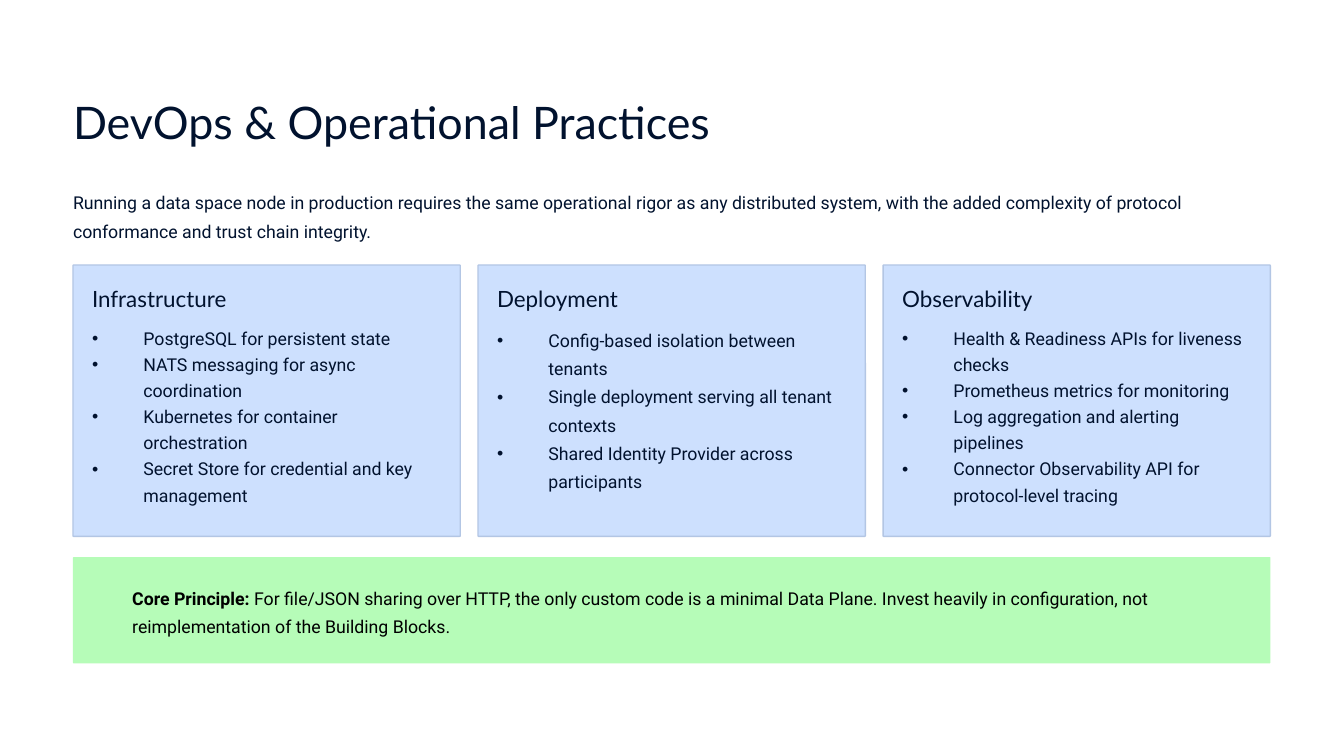
from dataclasses import dataclass

from lxml.etree import SubElement
from pptx import Presentation
from pptx.dml.color import RGBColor
from pptx.enum.shapes import MSO_SHAPE
from pptx.enum.text import MSO_ANCHOR, MSO_AUTO_SIZE, PP_ALIGN
from pptx.oxml.ns import qn
from pptx.util import Cm, Pt


@dataclass(frozen=True)
class Theme:
    page: str = "FFFFFF"
    ink: str = "01122E"
    card: str = "CDE0FE"
    card_line: str = "B3C6E4"
    callout: str = "B6FCB8"
    callout_ink: str = "000000"
    heading_font: str = "Lato"
    body_font: str = "Roboto"
    title_size: float = 24
    card_title_size: float = 12
    body_size: float = 9.5


@dataclass(frozen=True)
class Box:
    left: float
    top: float
    width: float
    height: float

    def inner_box(self, dx, dy, width, height):
        return Box(self.left + dx, self.top + dy, width, height)

    def lengths(self):
        return [Cm(v) for v in (self.left, self.top, self.width, self.height)]


THEME = Theme()
INDENT = 0.97
CARDS = [
    ("Infrastructure", 1, 1.23, [
        "PostgreSQL for persistent state",
        "NATS messaging for async coordination",
        "Kubernetes for container orchestration",
        "Secret Store for credential and key management",
    ]),
    ("Deployment", 2, 1.33, [
        "Config-based isolation between tenants",
        "Single deployment serving all tenant contexts",
        "Shared Identity Provider across participants",
    ]),
    ("Observability", 4, 1.23, [
        "Health & Readiness APIs for liveness checks",
        "Prometheus metrics for monitoring",
        "Log aggregation and alerting pipelines",
        "Connector Observability API for protocol-level tracing",
    ]),
]


def rgb(value):
    return RGBColor.from_string(value)


def move_to_front(sp, box):
    sp.left, sp.top, sp.width, sp.height = box.lengths()
    sp.element.getparent().append(sp.element)


def add_bullet(p):
    pPr = p._p.get_or_add_pPr()
    pPr.set("marL", str(Cm(INDENT)))
    pPr.set("indent", str(-Cm(INDENT)))
    color = SubElement(pPr, qn("a:buClr"))
    SubElement(color, qn("a:srgbClr")).set("val", THEME.ink)
    SubElement(pPr, qn("a:buChar")).set("char", "•")


def format_text(tf, font, size, spacing, color=THEME.ink, bullets=False):
    tf.word_wrap = True
    tf.auto_size = MSO_AUTO_SIZE.NONE
    tf.vertical_anchor = MSO_ANCHOR.TOP
    tf.margin_left = tf.margin_top = tf.margin_right = tf.margin_bottom = 0
    for p in tf.paragraphs:
        if bullets:
            add_bullet(p)
        p.alignment = PP_ALIGN.LEFT
        p.line_spacing = spacing
        p.space_before = Pt(0)
        for r in p.runs:
            r.font.name = font
            r.font.size = Pt(size)
            r.font.bold = False
            r.font.color.rgb = rgb(color)


def add_panel(s, box, fill, radius, line=None):
    sp = s.shapes.add_shape(MSO_SHAPE.ROUNDED_RECTANGLE, *box.lengths())
    sp.shadow.inherit = False
    sp.adjustments[0] = radius
    sp.fill.solid()
    sp.fill.fore_color.rgb = rgb(fill)
    if line:
        sp.line.color.rgb = rgb(line)
        sp.line.width = Pt(0.75)
    else:
        sp.line.fill.background()


def add_header(s, box):
    title = s.shapes.title
    title.text_frame.text = "DevOps & Operational Practices"
    format_text(title.text_frame, THEME.heading_font, THEME.title_size, 1.04)
    move_to_front(title, box.inner_box(0, 0, box.width, 1.07))

    intro = s.placeholders[3]
    intro.text_frame.text = (
        "Running a data space node in production requires the same operational rigor "
        "as any distributed system, with the added complexity of protocol conformance "
        "and trust chain integrity."
    )
    format_text(intro.text_frame, THEME.body_font, THEME.body_size, 1.33)
    move_to_front(intro, box.inner_box(0, 1.75, box.width, 1.09))


def add_card(s, box, heading, idx, spacing, items):
    pad = 0.36
    inner = box.width - 2 * pad
    add_panel(s, box, THEME.card, 0.003, THEME.card_line)

    label = s.shapes.add_textbox(*box.inner_box(pad, pad, inner, 0.53).lengths())
    label.text_frame.text = heading
    format_text(label.text_frame, THEME.heading_font, THEME.card_title_size, 1.04)

    body = s.placeholders[idx]
    body.text_frame.text = "\n".join(items)
    format_text(body.text_frame, THEME.body_font, THEME.body_size, spacing, bullets=True)
    move_to_front(body, box.inner_box(pad, 1.09, inner, 3.66))


def add_cards(s, box):
    width = 7.32
    step = (box.width - width) / (len(CARDS) - 1)
    for i, card in enumerate(CARDS):
        add_card(s, box.inner_box(i * step, 0, width, box.height), *card)


def add_callout(s, box):
    add_panel(s, box, THEME.callout, 0.008)
    sp = s.shapes.add_textbox(*box.inner_box(1.12, 0.44, 21.18, 1.09).lengths())
    p = sp.text_frame.paragraphs[0]
    lead = p.add_run()
    lead.text = "Core Principle:"
    p.add_run().text = (
        " For file/JSON sharing over HTTP, the only custom code is a minimal Data Plane. "
        "Invest heavily in configuration, not reimplementation of the Building Blocks."
    )
    format_text(sp.text_frame, THEME.body_font, THEME.body_size, 1.33, THEME.callout_ink)
    lead.font.bold = True


def main():
    prs = Presentation()
    prs.slide_width, prs.slide_height = Cm(25.4), Cm(14.29)
    s = prs.slides.add_slide(prs.slide_layouts.get_by_name("Comparison"))
    s.background.fill.solid()
    s.background.fill.fore_color.rgb = rgb(THEME.page)

    left, width = 1.38, 22.63
    add_header(s, Box(left, 1.75, width, 2.84))
    add_cards(s, Box(left, 5.01, width, 5.13))
    add_callout(s, Box(left, 10.53, width, 2.01))
    prs.save("out.pptx")


if __name__ == "__main__":
    main()
